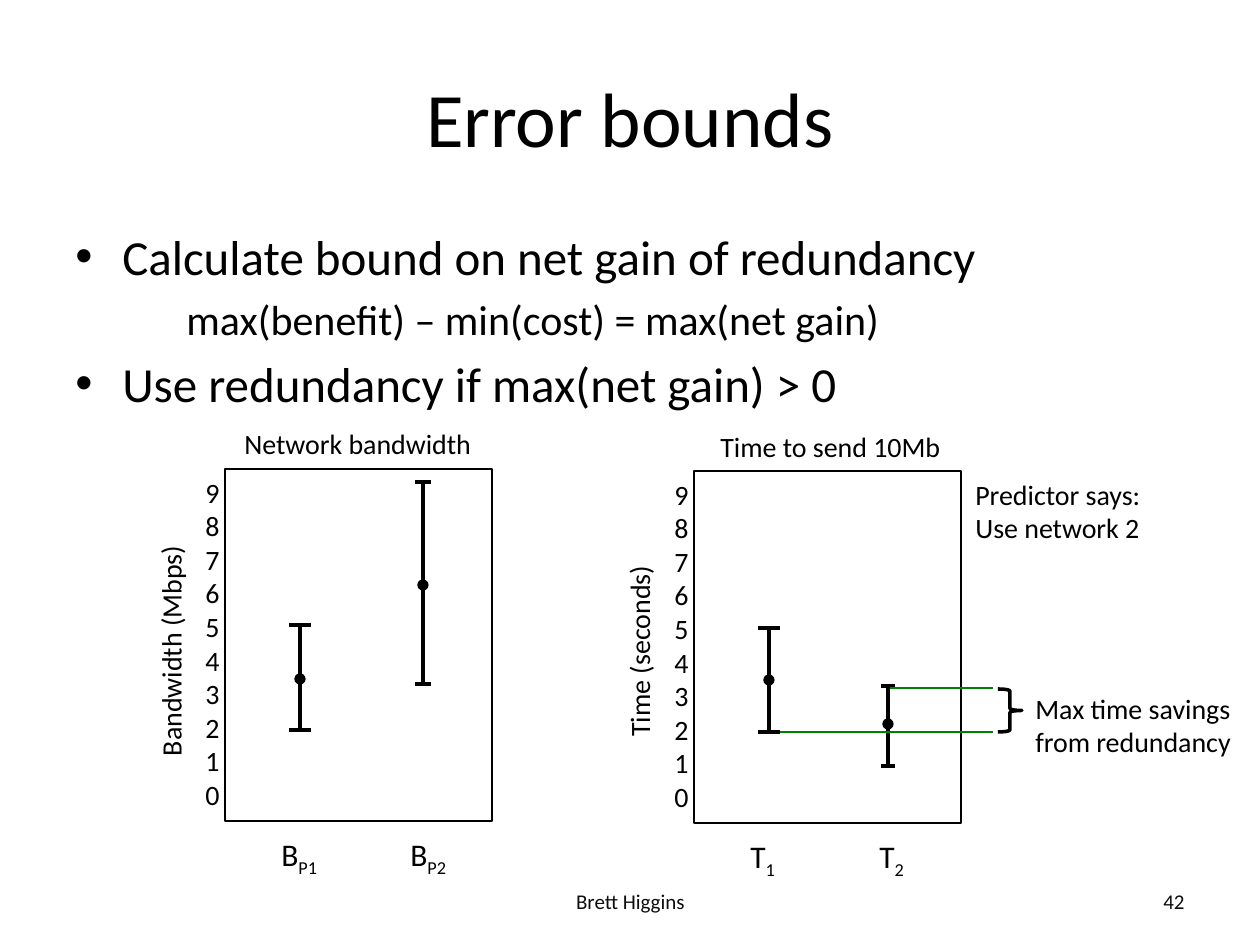
from lxml.etree import SubElement
from pptx import Presentation
from pptx.dml.color import RGBColor
from pptx.enum.shapes import MSO_CONNECTOR as CONN, MSO_SHAPE as SHAPE
from pptx.enum.text import MSO_ANCHOR as ANCHOR, PP_ALIGN as ALIGN
from pptx.oxml.ns import qn
from pptx.util import Emu, Pt

BLACK = RGBColor(0x00, 0x00, 0x00)
GREEN = RGBColor(0x00, 0x80, 0x00)
GRAY = RGBColor(0x0D, 0x0D, 0x0D)
FONT = "Calibri"


def px(n):
    return Emu(round(n * 914400 / 126))


class Deck:
    """Builds slide elements in one style, with lengths in px."""

    def __init__(self, w, h):
        self.prs = Presentation()
        self.prs.slide_width, self.prs.slide_height = px(w), px(h)
        self.s = self.prs.slides.add_slide(self.prs.slide_layouts[6])

    def run(self, p, text, size, color=BLACK, sub=False):
        r = p.add_run()
        r.text = text
        fmt = {"name": FONT, "size": Pt(size)}
        for key, value in fmt.items():
            setattr(r.font, key, value)
        r.font.color.rgb = color
        if sub:
            r._r.get_or_add_rPr().set("baseline", "-25000")

    def box(self, x, y, w, h, wrap=True, anchor=ANCHOR.TOP, rotation=0):
        sp = self.s.shapes.add_textbox(*map(px, (x, y, w, h)))
        sp.rotation = rotation
        tf = sp.text_frame
        fmt = {"word_wrap": wrap, "vertical_anchor": anchor}
        for key, value in fmt.items():
            setattr(tf, key, value)
        return tf

    def text(self, at, lines, size=16, color=BLACK, align=ALIGN.LEFT, **fmt):
        tf = self.box(*at, **fmt)
        for i, line in enumerate(lines):
            p = tf.add_paragraph() if i else tf.paragraphs[0]
            p.alignment = align
            self.run(p, line, size, color)

    def body(self, at, items):
        tf = self.box(*at)
        for i, (line, size, left, hang, bullet) in enumerate(items):
            p = tf.add_paragraph() if i else tf.paragraphs[0]
            pPr = p._p.get_or_add_pPr()
            pPr.set("marL", str(px(left)))
            pPr.set("indent", str(px(-hang)))
            if bullet:
                SubElement(pPr, qn("a:buFont"), typeface="Arial")
                SubElement(pPr, qn("a:buChar"), char=bullet)
            else:
                p.level = 1
            p.space_before = Pt(size * 0.2 if i else 0)
            self.run(p, line, size)

    def tick(self, x, y, w, base, sub):
        p = self.box(x, y, w, 50, wrap=False).paragraphs[0]
        self.run(p, base, 18)
        self.run(p, sub, 18, sub=True)

    def shape(self, kind, x, y, w, h, width=0.75, fill=None):
        sp = self.s.shapes.add_shape(kind, *map(px, (x, y, w, h)))
        sp.shadow.inherit = False
        if fill is None:
            sp.fill.background()
        else:
            sp.fill.solid()
            sp.fill.fore_color.rgb = fill
        sp.line.color.rgb = BLACK
        sp.line.width = Pt(width)

    def line(self, x1, y1, x2, y2, color=BLACK, width=2):
        c = self.s.shapes.add_connector(CONN.STRAIGHT, *map(px, (x1, y1, x2, y2)))
        c.line.color.rgb = color
        c.line.width = Pt(width)
        SubElement(c._element.spPr, qn("a:effectLst"))

    def error_bar(self, x, top, mean, bottom, cap):
        self.line(x, top, x, bottom)
        for y in (top, bottom):
            self.line(x - cap, y, x + cap, y)
        self.shape(SHAPE.OVAL, x - 5, mean - 5, 10, 10, fill=BLACK)

    def plot(self, x, y, title, title_at, axis, axis_at, ticks, tick_w, bars):
        self.shape(SHAPE.RECTANGLE, x, y, 267, 352)
        self.text((x - 32, y, 33, 386), ["9876543210"])
        self.text(title_at, [title])
        self.text(axis_at, [axis], rotation=270)
        for i, (base, sub) in enumerate(ticks):
            self.tick(x + 44 + 129 * i, y + 360, tick_w, base, sub)
        for bar in bars:
            self.error_bar(*bar)


def main():
    d = Deck(1260, 945)
    d.text((63, 38, 1134, 157), ["Error bounds"], 44, align=ALIGN.CENTER,
           anchor=ANCHOR.MIDDLE)
    d.body((63, 220, 1134, 624), [
        ("Calculate bound on net gain of redundancy", 28, 47, 47, "•"),
        ("max(benefit) – min(cost) = max(net gain)", 24, 111, 0, None),
        ("Use redundancy if max(net gain) > 0", 28, 47, 47, "•"),
    ])
    d.plot(694, 471, "Time to send 10Mb", (708, 423, 246, 47),
           "Time (seconds)", (536, 622, 207, 47),
           [("T", "1"), ("T", "2")], 52,
           [(769, 628, 680, 732, 11), (888, 686, 724, 766, 7)])
    d.plot(225, 469, "Network bandwidth", (232, 420, 265, 47),
           "Bandwidth (Mbps)", (28, 602, 286, 47),
           [("B", "P1"), ("B", "P2")], 64,
           [(300, 625, 679, 730, 11), (423, 482, 585, 684, 8)])
    for x, y in ((890, 688), (780, 732)):
        d.line(x, y, 993, y, GREEN, 1)
    d.shape(SHAPE.RIGHT_BRACE, 998, 689, 24, 43, width=2)
    d.text((1023, 685, 227, 81), ["Max time savings", "from redundancy"])
    d.text((963, 471, 265, 81), ["Predictor says:", "Use network 2"])
    d.text((903, 876, 294, 50), ["42"], 12, GRAY, ALIGN.RIGHT,
           anchor=ANCHOR.MIDDLE)
    d.text((431, 876, 399, 50), ["Brett Higgins"], 12, GRAY, ALIGN.CENTER,
           anchor=ANCHOR.MIDDLE)
    d.prs.save("out.pptx")


if __name__ == "__main__":
    main()
